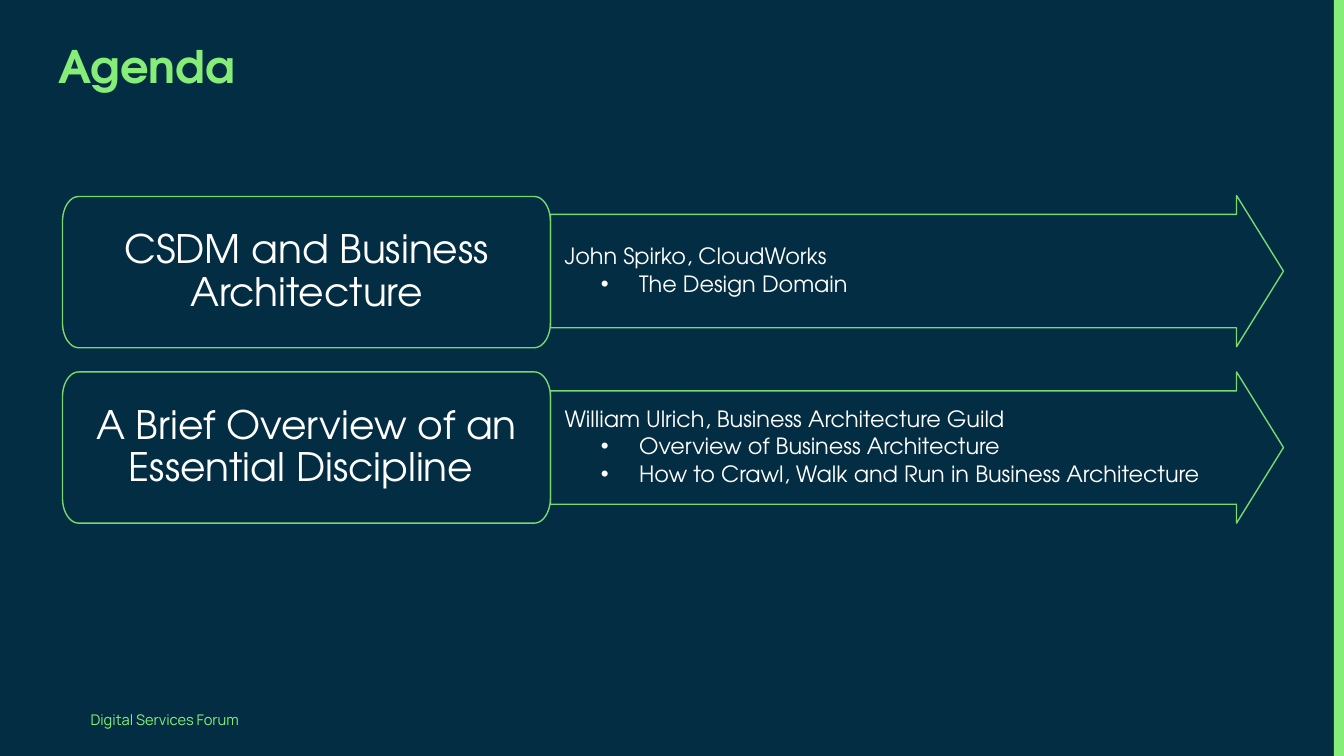
from math import cos, pi, sin

from lxml.etree import SubElement
from pptx import Presentation
from pptx.dml.color import RGBColor
from pptx.enum.shapes import MSO_SHAPE as Preset
from pptx.enum.text import MSO_ANCHOR as Anchor, PP_ALIGN as Align
from pptx.oxml.ns import qn
from pptx.util import Inches, Pt

# Content
TITLE = "Agenda"
FOOTER = "Digital Services Forum"
SESSIONS = [
    {"topic": "CSDM and Business Architecture",
     "speaker": "John Spirko, CloudWorks",
     "points": ["The Design Domain"],
     "arrow_top": 1.94, "box_top": 1.95},
    {"topic": "A Brief Overview of an Essential Discipline ",
     "speaker": "William Ulrich, Business Architecture Guild",
     "points": ["Overview of Business Architecture",
                "How to Crawl, Walk and Run in Business Architecture"],
     "arrow_top": 3.69, "box_top": 3.69},
]

# Style
NAVY = RGBColor(0x03, 0x2D, 0x42)
GREEN = RGBColor(0x86, 0xED, 0x78)
BOX_GREEN = RGBColor(0x7A, 0xD7, 0x6D)
FOOTER_GREEN = RGBColor(0x86, 0xEE, 0x79)
WHITE = RGBColor(0xFF, 0xFF, 0xFF)
MAIN_FONT, FOOTER_FONT = "TeX Gyre Adventor", "Manrope"

# Layout in inches
BOX_LEFT, BOX_WIDTH, ROW_HEIGHT = 0.62, 4.84, 1.5
CORNER_X, CORNER_Y, ARC_STEPS = 0.16, 0.25, 12
ARROW_LEFT, ARROW_WIDTH = BOX_LEFT + BOX_WIDTH, 7.27
SHAFT_SHARE, HEAD_SHARE = 0.75, 0.31


def format_font(paragraph, **values):
    for name, value in values.items():
        if name == "color":
            paragraph.font.color.rgb = value
        else:
            setattr(paragraph.font, name, value)


def format_frame(frame, anchor, left, top, right, bottom):
    values = {"word_wrap": True, "vertical_anchor": anchor,
              "margin_left": Inches(left), "margin_top": Inches(top),
              "margin_right": Inches(right), "margin_bottom": Inches(bottom)}
    for name, value in values.items():
        setattr(frame, name, value)


def outline(shape, color):
    shape.shadow.inherit = False
    shape.fill.background()
    shape.line.color.rgb = color
    shape.line.width = Pt(1)


def set_indent(paragraph, left, first=0.0, bullet=None):
    properties = paragraph._p.get_or_add_pPr()
    properties.set("marL", str(Inches(left)))
    properties.set("indent", str(Inches(first)))
    if bullet:
        SubElement(properties, qn("a:buFont")).set("typeface", "Arial")
        SubElement(properties, qn("a:buChar")).set("char", bullet)


def rounded_outline(left, top, width, height):
    """Points of a rectangle with elliptical corners, clockwise from the left."""
    near_x, far_x = left + CORNER_X, left + width - CORNER_X
    near_y, far_y = top + CORNER_Y, top + height - CORNER_Y
    centres = [(near_x, near_y), (far_x, near_y), (far_x, far_y), (near_x, far_y)]
    points = []
    for corner, (x, y) in enumerate(centres):
        for step in range(ARC_STEPS + 1):
            angle = pi + (corner + step / ARC_STEPS) * pi / 2
            points.append((Inches(x + CORNER_X * cos(angle)),
                           Inches(y + CORNER_Y * sin(angle))))
    return points


def add_arrow(slide, session):
    arrow = slide.shapes.add_shape(
        Preset.RIGHT_ARROW, Inches(ARROW_LEFT), Inches(session["arrow_top"]),
        Inches(ARROW_WIDTH), Inches(ROW_HEIGHT))
    arrow.adjustments[0], arrow.adjustments[1] = SHAFT_SHARE, HEAD_SHARE
    outline(arrow, GREEN)
    line_color = arrow.line._ln.find(".//" + qn("a:srgbClr"))
    SubElement(line_color, qn("a:alpha")).set("val", "90000")

    frame = arrow.text_frame
    format_frame(frame, Anchor.MIDDLE, 0.01, 0, 0, 0)
    for index, text in enumerate([session["speaker"], *session["points"]]):
        paragraph = frame.add_paragraph() if index else frame.paragraphs[0]
        paragraph.text = text
        paragraph.alignment = Align.LEFT
        paragraph.line_spacing = 0.9
        paragraph.space_after = Pt(2.4)
        if index:
            set_indent(paragraph, 0.87, -0.38, "•")
        else:
            set_indent(paragraph, 0.13)
        format_font(paragraph, name=MAIN_FONT, size=Pt(16), color=WHITE)


def add_topic_box(slide, session):
    points = rounded_outline(BOX_LEFT, session["box_top"], BOX_WIDTH, ROW_HEIGHT)
    builder = slide.shapes.build_freeform(*points[0])
    builder.add_line_segments(points[1:], close=True)
    box = builder.convert_to_shape()
    outline(box, BOX_GREEN)
    format_frame(box.text_frame, Anchor.MIDDLE, 0.2, 0.1, 0.2, 0.1)
    paragraph = box.text_frame.paragraphs[0]
    paragraph.text = session["topic"]
    paragraph.alignment = Align.CENTER
    paragraph.line_spacing = 0.9
    format_font(paragraph, name=MAIN_FONT, size=Pt(28), color=WHITE)


def main():
    presentation = Presentation()
    presentation.slide_width = Inches(13.33)
    presentation.slide_height = Inches(7.5)
    slide = presentation.slides.add_slide(presentation.slide_layouts[5])
    slide.background.fill.solid()
    slide.background.fill.fore_color.rgb = NAVY

    # Edge stripe
    stripe = slide.shapes.add_shape(
        Preset.RECTANGLE, Inches(13.23), 0, Inches(0.1), Inches(7.5))
    stripe.shadow.inherit = False
    stripe.fill.solid()
    stripe.fill.fore_color.rgb = GREEN
    stripe.line.fill.background()

    # Footer
    footer = slide.shapes.add_textbox(
        Inches(0.8), Inches(7.01), Inches(1.87), Inches(0.25))
    format_frame(footer.text_frame, Anchor.MIDDLE, 0.1, 0.05, 0.1, 0.05)
    paragraph = footer.text_frame.paragraphs[0]
    paragraph.text = FOOTER
    format_font(paragraph, name=FOOTER_FONT, size=Pt(10.5), color=FOOTER_GREEN)

    # Title
    title = slide.shapes.title
    title.left, title.top = Inches(0.48), Inches(0.33)
    title.width, title.height = Inches(12.24), Inches(0.73)
    format_frame(title.text_frame, Anchor.TOP, 0.1, 0.05, 0.1, 0.05)
    paragraph = title.text_frame.paragraphs[0]
    paragraph.text = TITLE
    paragraph.alignment = Align.LEFT
    format_font(paragraph, name=MAIN_FONT, size=Pt(32), bold=True, color=GREEN)

    # Sessions
    for session in SESSIONS:
        add_arrow(slide, session)
        add_topic_box(slide, session)

    presentation.save("out.pptx")


if __name__ == "__main__":
    main()
